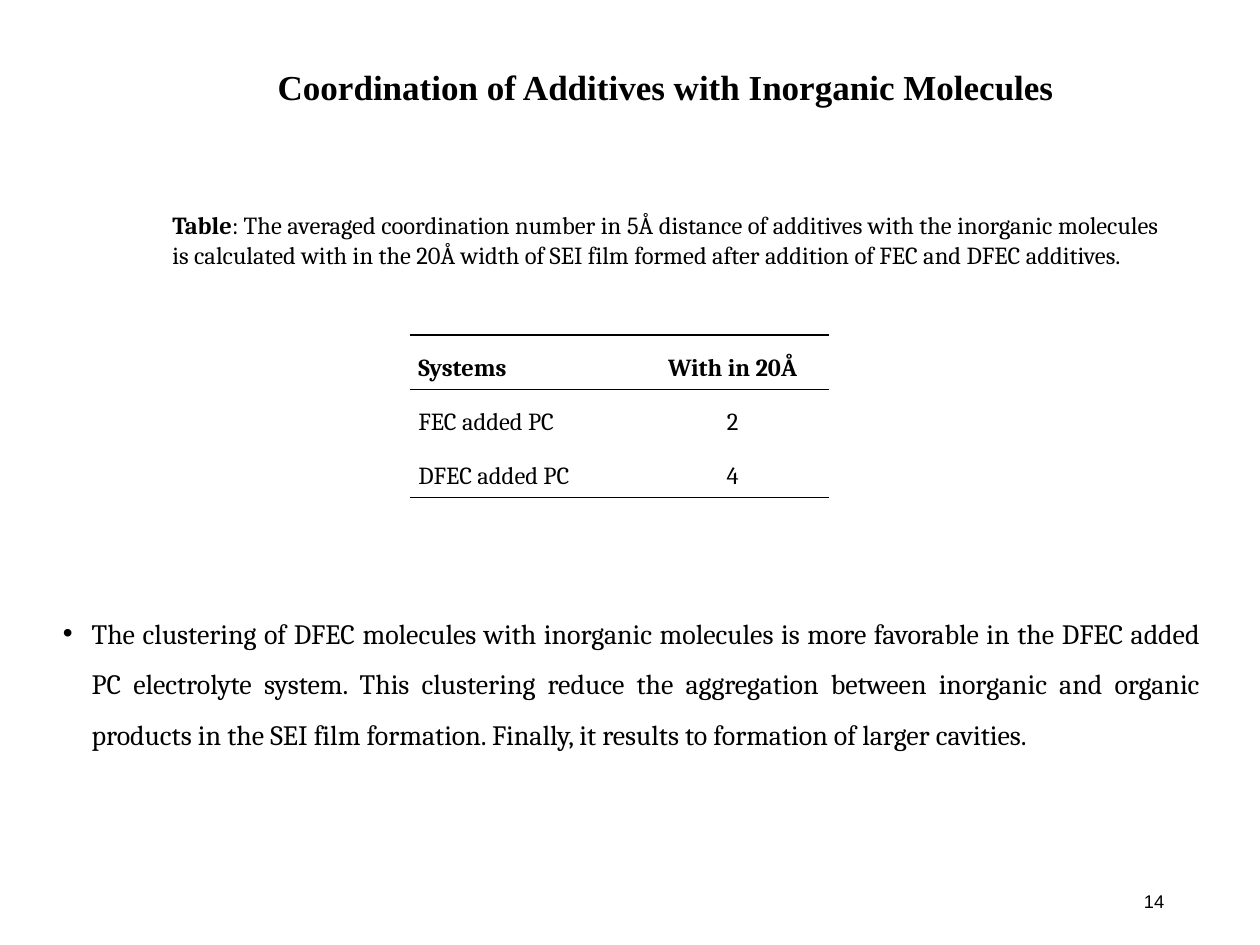
import dataclasses

import lxml.etree
import pptx
import pptx.dml.color
import pptx.enum.text
import pptx.oxml.ns
import pptx.util

Inches = pptx.util.Inches
Align = pptx.enum.text.PP_ALIGN
Anchor = pptx.enum.text.MSO_ANCHOR


@dataclasses.dataclass(frozen=True)
class Theme:
    ink: str = "000000"
    title_font: str = "Times New Roman"
    body_font: str = "Cambria"
    number_font: str = "Arial"
    title_size: float = 20
    body_size: float = 16
    table_size: float = 14
    number_size: float = 10.5
    rule_width: float = 1


THEME = Theme()


def add_element(parent, tag, **attributes):
    return lxml.etree.SubElement(parent, pptx.oxml.ns.qn(tag), **attributes)


def style_paragraph(para, font_name, size, align, bold=None):
    para.alignment = align
    para.font.name = font_name
    para.font.size = pptx.util.Pt(size)
    para.font.bold = bold
    para.font.color.rgb = pptx.dml.color.RGBColor.from_string(THEME.ink)


def add_text(page, left, top, width, height, spans, font_name, size, align,
             bold=None, bullet=False, anchor=Anchor.TOP):
    box = page.shapes.add_textbox(Inches(left), Inches(top), Inches(width), Inches(height))
    frame = box.text_frame
    frame.word_wrap = True
    frame.vertical_anchor = anchor
    para = frame.paragraphs[0]
    for text, span_bold in spans:
        span = para.add_run()
        span.text = text
        span.font.bold = span_bold
    if bullet:
        para.line_spacing = 1.5
        properties = para._p.get_or_add_pPr()
        indent = Inches(0.23)
        properties.set("marL", str(indent))
        properties.set("indent", str(-indent))
        add_element(properties, "a:buFont", typeface="Arial")
        add_element(properties, "a:buChar", char="•")
    style_paragraph(para, font_name, size, align, bold)
    return frame


def set_borders(cell, ruled_sides):
    properties = cell._tc.get_or_add_tcPr()
    for position, side in enumerate("LRTB"):
        line = add_element(properties, f"a:ln{side}", w=str(pptx.util.Pt(THEME.rule_width)))
        if side in ruled_sides:
            fill = add_element(line, "a:solidFill")
            add_element(fill, "a:srgbClr", val=THEME.ink)
        else:
            add_element(line, "a:noFill")
        properties.insert(position, line)


def add_ruled_table(page, left, top, column_widths, row_height, rows):
    frame = page.shapes.add_table(
        len(rows), len(column_widths), Inches(left), Inches(top),
        Inches(sum(column_widths)), Inches(row_height * len(rows)))
    table = frame.table
    table.first_row = False
    table.horz_banding = False
    for column, width in zip(table.columns, column_widths):
        column.width = Inches(width)
    for row_index, values in enumerate(rows):
        is_header = row_index == 0
        is_last = row_index == len(rows) - 1
        ruled_sides = ("T" if row_index < 2 else "") + ("B" if is_header or is_last else "")
        for column_index, value in enumerate(values):
            cell = table.cell(row_index, column_index)
            cell.text = value
            cell.margin_left = cell.margin_right = Inches(0.07)
            cell.margin_top = cell.margin_bottom = Inches(0.04)
            cell.fill.background()
            set_borders(cell, ruled_sides)
            para = cell.text_frame.paragraphs[0]
            para.line_spacing = 1.5
            align = Align.CENTER if column_index else Align.LEFT
            style_paragraph(para, THEME.body_font, THEME.table_size, align, is_header)


def add_page_number(page, number):
    frame = add_text(page, 7.06, 6.95, 2.25, 0.4, [(number, None)],
                     THEME.number_font, THEME.number_size, Align.RIGHT, anchor=Anchor.MIDDLE)
    frame.margin_left = frame.margin_right = Inches(0.07)
    frame.margin_top = frame.margin_bottom = Inches(0.04)


def main():
    deck = pptx.Presentation()
    deck.slide_width, deck.slide_height = Inches(10), Inches(7.5)
    page = deck.slides.add_slide(deck.slide_layouts[6])

    add_text(page, 1.85, 0.47, 6.87, 0.44,
             [("Coordination of Additives with Inorganic Molecules", None)],
             THEME.title_font, THEME.title_size, Align.CENTER, bold=True)
    add_text(page, 1.27, 1.62, 8.03, 0.81,
             [("Table", True),
              (": The averaged coordination number in 5Å distance of additives with the "
               "inorganic molecules is calculated with in the 20Å width of SEI film formed "
               "after addition of FEC and DFEC additives.", None)],
             THEME.body_font, THEME.table_size, Align.JUSTIFY)
    add_ruled_table(page, 3.25, 2.66, [1.8, 1.53], 0.43,
                    [["Systems", "With in 20Å"],
                     ["FEC added PC", "2"],
                     ["DFEC added PC", "4"]])
    add_text(page, 0.4, 4.71, 9.23, 1.31,
             [("The clustering of DFEC molecules with inorganic molecules is more favorable "
               "in the DFEC added PC electrolyte system. This clustering reduce the "
               "aggregation between inorganic and organic products in the SEI film "
               "formation. Finally, it results to formation of larger cavities.", None)],
             THEME.body_font, THEME.body_size, Align.JUSTIFY, bullet=True)
    add_page_number(page, "14")

    deck.save("out.pptx")


if __name__ == "__main__":
    main()
